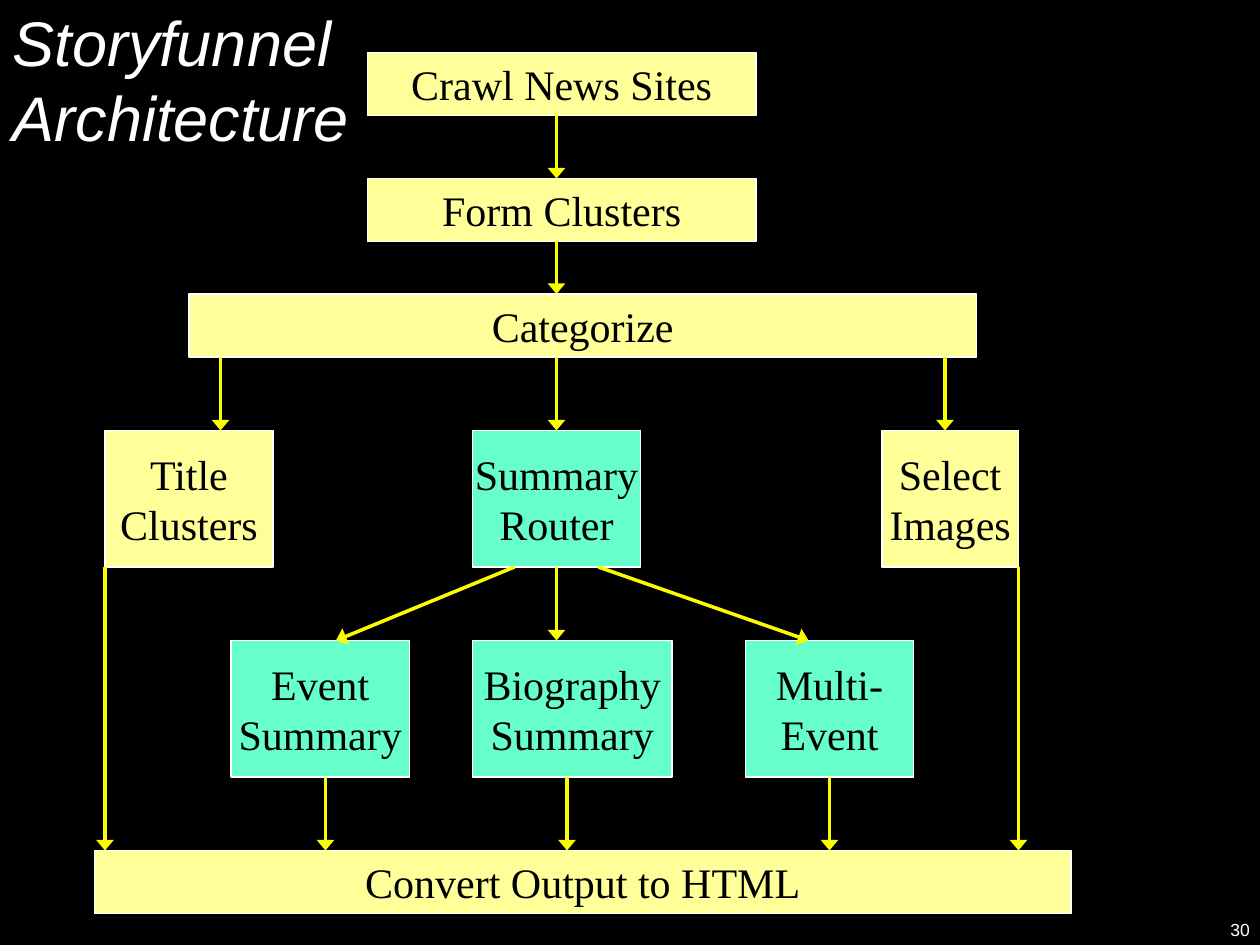
import pptx
import pptx.util
import pptx.dml.color
import pptx.enum.shapes
import pptx.enum.text
import pptx.oxml.ns
import lxml.etree

BLACK = pptx.dml.color.RGBColor(0x00, 0x00, 0x00)
WHITE = pptx.dml.color.RGBColor(0xFF, 0xFF, 0xFF)
CREAM = pptx.dml.color.RGBColor(0xFF, 0xFF, 0x99)
MINT = pptx.dml.color.RGBColor(0x66, 0xFF, 0xCC)
YELLOW = pptx.dml.color.RGBColor(0xFA, 0xFD, 0x00)

COLUMNS = 120

deck = pptx.Presentation()
deck.slide_width = pptx.util.Inches(10)
deck.slide_height = pptx.util.Inches(7.5)
CELL = deck.slide_width // COLUMNS

page = deck.slides.add_slide(deck.slide_layouts[5])
page.background.fill.solid()
page.background.fill.fore_color.rgb = BLACK


def grid(*cells):
    return [cell * CELL for cell in cells]


def style_text(frame, size, font, color, align, italic=False):
    frame.vertical_anchor = pptx.enum.text.MSO_ANCHOR.MIDDLE
    for para in frame.paragraphs:
        para.alignment = align
        for span in para.runs:
            span.font.size = pptx.util.Pt(size)
            span.font.name = font
            span.font.color.rgb = color
            span.font.italic = italic


LEFT = pptx.enum.text.PP_ALIGN.LEFT
CENTER = pptx.enum.text.PP_ALIGN.CENTER

title = page.shapes.title
title.left, title.top, title.width, title.height = grid(0, 0, 102, 15)
title.text_frame.text = "Storyfunnel\vArchitecture"
title.text_frame.auto_size = pptx.enum.text.MSO_AUTO_SIZE.NONE
style_text(title.text_frame, 36, "Arial", WHITE, LEFT, italic=True)

BAR, BLOCK = 6, 13
TOP_ROW, MIDDLE_ROW, BOTTOM_ROW = 41, 61, 81

steps = [
    ("Crawl News Sites", 35, 5, 37, BAR, CREAM),
    ("Form Clusters", 35, 17, 37, BAR, CREAM),
    ("Categorize", 18, 28, 75, BAR, CREAM),
    ("Title\nClusters", 10, TOP_ROW, 16, BLOCK, CREAM),
    ("Summary\nRouter", 45, TOP_ROW, 16, BLOCK, MINT),
    ("Select\nImages", 84, TOP_ROW, 13, BLOCK, CREAM),
    ("Event\nSummary", 22, MIDDLE_ROW, 17, BLOCK, MINT),
    ("Biography\nSummary", 45, MIDDLE_ROW, 19, BLOCK, MINT),
    ("Multi-\nEvent", 71, MIDDLE_ROW, 16, BLOCK, MINT),
    ("Convert Output to HTML", 9, BOTTOM_ROW, 93, BAR, CREAM),
]
for label, left, top, width, height, color in steps:
    box = page.shapes.add_shape(
        pptx.enum.shapes.MSO_SHAPE.RECTANGLE, *grid(left, top, width, height))
    box.shadow.inherit = False
    box.fill.solid()
    box.fill.fore_color.rgb = color
    box.line.color.rgb = WHITE
    box.line.width = pptx.util.Pt(1)
    box.text_frame.text = label
    box.text_frame.word_wrap = False
    style_text(box.text_frame, 24, "Times New Roman", BLACK, CENTER)

ROUTER_FOOT = TOP_ROW + BLOCK
SUMMARY_FOOT = MIDDLE_ROW + BLOCK

arrows = [(53, 11, 53, 17), (53, 23, 53, 28)]
arrows += [(x, 34, x, TOP_ROW) for x in (21, 53, 90)]
arrows += [(x, ROUTER_FOOT, x, BOTTOM_ROW) for x in (10, 97)]
arrows += [(x, SUMMARY_FOOT, x, BOTTOM_ROW) for x in (31, 54, 79)]
arrows += [(start, ROUTER_FOOT, end, MIDDLE_ROW)
           for start, end in ((49, 32), (57, 77), (53, 53))]
for ends in arrows:
    arrow = page.shapes.add_connector(
        pptx.enum.shapes.MSO_CONNECTOR.STRAIGHT, *grid(*ends))
    arrow.line.color.rgb = YELLOW
    arrow.line.width = pptx.util.Pt(2)
    lxml.etree.SubElement(
        arrow.line._get_or_add_ln(), pptx.oxml.ns.qn("a:tailEnd"),
        type="triangle", w="lg")
    lxml.etree.SubElement(
        arrow._element.spPr, pptx.oxml.ns.qn("a:effectLst"))

number = page.shapes.add_textbox(*grid(116, 87, 5, 3))
number.text_frame.text = "30"
style_text(number.text_frame, 10, "Arial", WHITE, LEFT)

deck.save("out.pptx")
